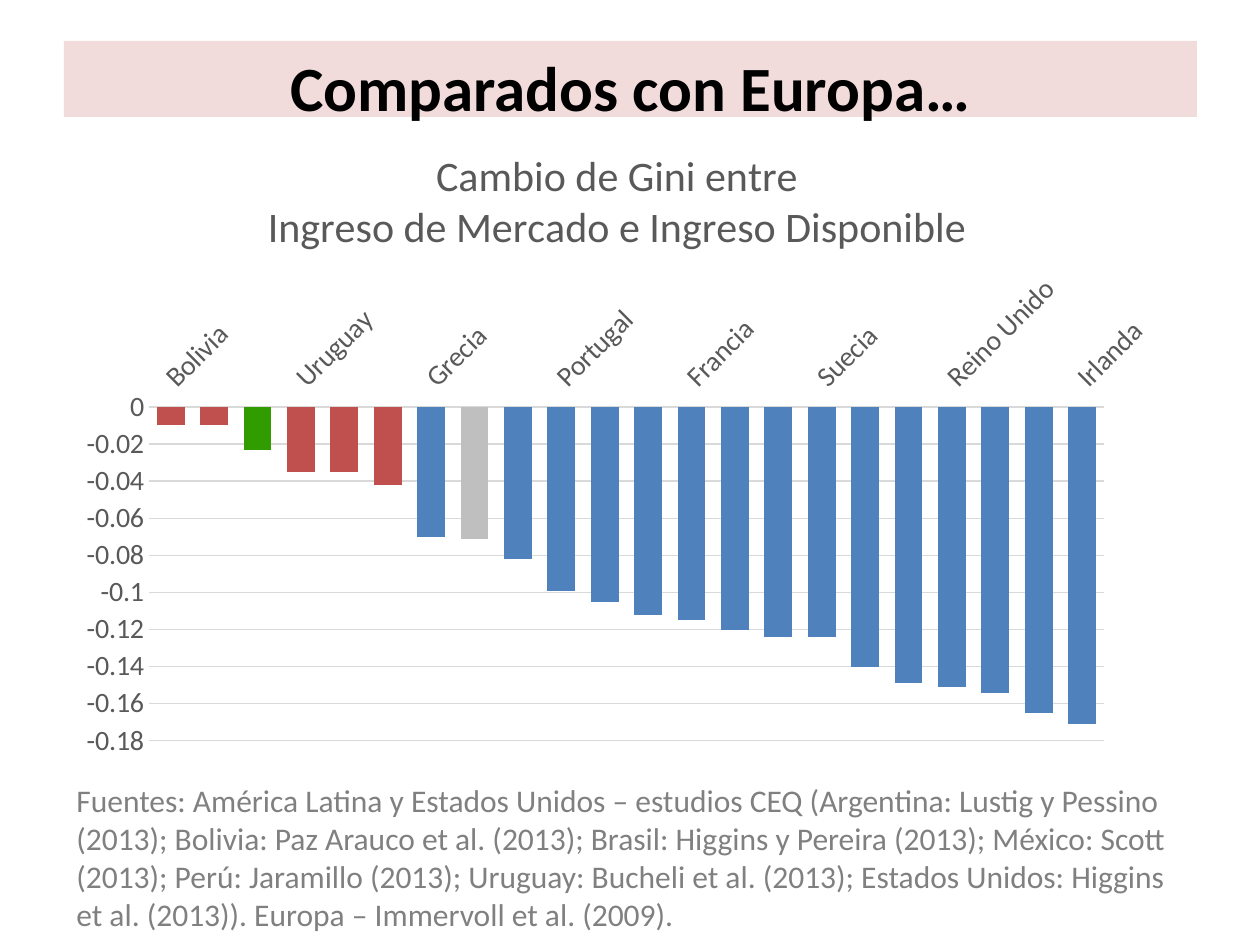
from lxml import etree
from pptx import Presentation
from pptx import util as u
from pptx.chart.data import CategoryChartData
from pptx.dml.color import RGBColor
from pptx.enum import chart as ch, shapes, text
from pptx.oxml.ns import qn

# Content
HEADING = "Comparados con Europa…"
CHART_TITLE = ["Cambio de Gini entre", "Ingreso de Mercado e Ingreso Disponible"]
SOURCES = (
    "Fuentes: América Latina y Estados Unidos – estudios CEQ (Argentina: Lustig y Pessino (2013); "
    "Bolivia: Paz Arauco et al. (2013); Brasil: Higgins y Pereira (2013); México: Scott (2013); "
    "Perú: Jaramillo (2013); Uruguay: Bucheli et al. (2013); Estados Unidos: Higgins et al. (2013)). "
    "Europa – Immervoll et al. (2009)."
)
GINI_CHANGE = {
    "Bolivia": -0.01, "Perú": -0.01, "México": -0.023, "Uruguay": -0.035,
    "Brasil": -0.035, "Argentina": -0.042, "Grecia": -0.07, "Estados Unidos": -0.071,
    "Italia": -0.082, "Portugal": -0.099, "España": -0.105, "Holanda": -0.112,
    "Francia": -0.115, "Austria": -0.12, "Alemania": -0.124, "Suecia": -0.124,
    "Luxemburgo": -0.14, "Bélgica": -0.149, "Reino Unido": -0.151,
    "Finlandia": -0.154, "Dinamarca": -0.165, "Irlanda": -0.171,
}
COLORS = {
    "banner": "F2DCDB", "heading": "000000", "chart text": "595959", "grid": "D9D9D9",
    "europe": "4F81BD", "latin america": "C0504D", "mexico": "319C00", "usa": "BFBFBF",
    "sources": "808080",
}
HIGHLIGHTS = {
    **dict.fromkeys(["Bolivia", "Perú", "Uruguay", "Brasil", "Argentina"], "latin america"),
    "México": "mexico", "Estados Unidos": "usa",
}

# Geometry in px
PX = 914400 // 126
BANNER = (64, 41, 1133, 76)
CHART = (64, 126, 1106, 645)
PLOT = (149, 407, 955, 334)
NOTE = (64, 775, 1133, 165)


def emu(box):
    return [side * PX for side in box]


def color(name):
    return RGBColor.from_string(COLORS[name])


def style(font, size, name, bold=False):
    font.name, font.size, font.bold = "Calibri", u.Pt(size), bold
    font.color.rgb = color(name)


def grid_line(line):
    line.color.rgb = color("grid")
    line.width = u.Pt(0.75)


prs = Presentation()
prs.slide_width, prs.slide_height = u.Inches(10), u.Inches(7.5)
slide = prs.slides.add_slide(prs.slide_layouts[6])

# Heading banner
banner = slide.shapes.add_shape(shapes.MSO_SHAPE.RECTANGLE, *emu(BANNER))
banner.shadow.inherit = False
banner.fill.solid()
banner.fill.fore_color.rgb = color("banner")
banner.line.fill.background()
banner.text_frame.text = HEADING
banner.text_frame.vertical_anchor = text.MSO_ANCHOR.MIDDLE
heading = banner.text_frame.paragraphs[0]
heading.alignment = text.PP_ALIGN.CENTER
heading.line_spacing = 1.2
style(heading.runs[0].font, 36, "heading", bold=True)

# Column chart
data = CategoryChartData()
data.categories = list(GINI_CHANGE)
data.add_series("Series 1", list(GINI_CHANGE.values()))
chart = slide.shapes.add_chart(ch.XL_CHART_TYPE.COLUMN_CLUSTERED, *emu(CHART), data).chart
style(chart.font, 16, "chart text")
chart.has_legend = False
chart.has_title = True
title = chart.chart_title
title.include_in_layout = False
title.text_frame.text = "\n".join(CHART_TITLE)
for line in title.text_frame.paragraphs:
    style(line.runs[0].font, 24, "chart text")

columns = chart.plots[0]
columns.gap_width, columns.overlap = 56, 4
columns.vary_by_categories = False
gini = columns.series[0]
gini.invert_if_negative = False
gini.format.fill.solid()
gini.format.fill.fore_color.rgb = color("europe")
for index, country in enumerate(GINI_CHANGE):
    if country in HIGHLIGHTS:
        fill = gini.points[index].format.fill
        fill.solid()
        fill.fore_color.rgb = color(HIGHLIGHTS[country])

# Axes
countries, values = chart.category_axis, chart.value_axis
for axis in (countries, values):
    axis.major_tick_mark = axis.minor_tick_mark = ch.XL_TICK_MARK.NONE
    style(axis.tick_labels.font, 16, "chart text")
countries.tick_label_position = ch.XL_TICK_LABEL_POSITION.HIGH
grid_line(countries.format.line)
values.minimum_scale, values.maximum_scale, values.major_unit = -0.18, 0, 0.02
values.tick_labels.number_format = "General"
values.tick_labels.number_format_is_linked = False
values.format.line.fill.background()
grid_line(values.major_gridlines.format.line)

# Slanted labels, one country in three
cat_xml = countries._element
cat_xml.find(qn("c:txPr")).find(qn("a:bodyPr")).set("rot", str(-45 * 60000))
skip = etree.Element(qn("c:tickLblSkip"), val="3")
cat_xml.find(qn("c:noMultiLvlLbl")).addprevious(skip)

# Fixed plot area inside the chart
plot_area = chart._chartSpace.chart.plotArea
for old in plot_area.findall(qn("c:layout")):
    plot_area.remove(old)
layout = etree.Element(qn("c:layout"))
manual = etree.SubElement(layout, qn("c:manualLayout"))
x, y, w, h = PLOT
left, top, width, height = CHART
settings = {
    "layoutTarget": "inner", "xMode": "edge", "yMode": "edge",
    "x": (x - left) / width, "y": (y - top) / height, "w": w / width, "h": h / height,
}
for tag, value in settings.items():
    etree.SubElement(manual, qn(f"c:{tag}"), val=str(value))
plot_area.insert(0, layout)

# Sources
note = slide.shapes.add_textbox(*emu(NOTE)).text_frame
note.word_wrap = True
note.auto_size = text.MSO_AUTO_SIZE.SHAPE_TO_FIT_TEXT
note.text = SOURCES
style(note.paragraphs[0].runs[0].font, 18, "sources")

prs.save("out.pptx")
